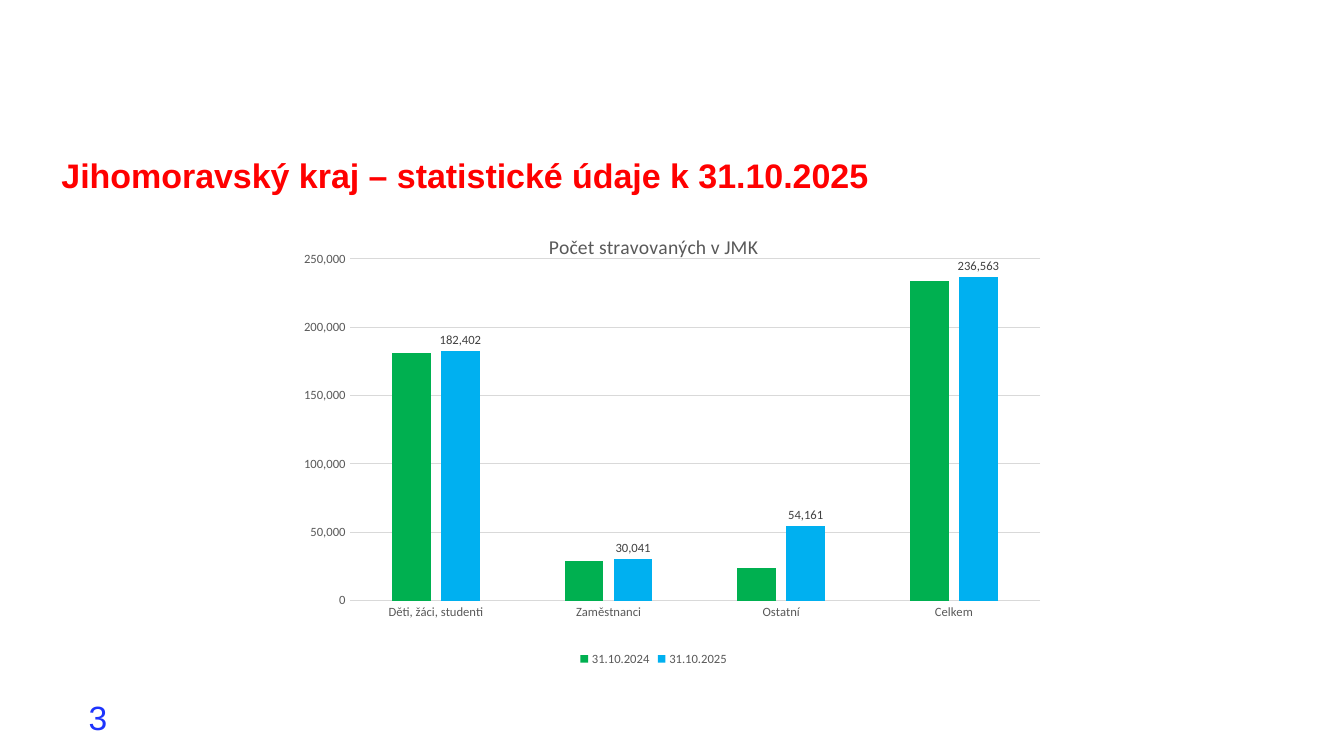
from lxml.etree import SubElement
from pptx import Presentation
from pptx.chart.data import CategoryChartData
from pptx.dml.color import RGBColor
from pptx.enum.chart import XL_CHART_TYPE, XL_LABEL_POSITION, XL_LEGEND_POSITION, XL_TICK_MARK
from pptx.enum.text import MSO_ANCHOR, PP_ALIGN
from pptx.oxml.ns import qn
from pptx.util import Pt

RED = RGBColor(0xFF, 0x00, 0x00)
BLUE = RGBColor(0x1D, 0x34, 0xFD)
GREEN = RGBColor(0x00, 0xB0, 0x50)
SKY = RGBColor(0x00, 0xB0, 0xF0)
GRAY = RGBColor(0x59, 0x59, 0x59)
DARK = RGBColor(0x40, 0x40, 0x40)
LIGHT = RGBColor(0xD9, 0xD9, 0xD9)

CATEGORIES = ["Děti, žáci, studenti", "Zaměstnanci", "Ostatní", "Celkem"]
SERIES = [
    ("31.10.2024", [181000, 29000, 24000, 234000], GREEN),
    ("31.10.2025", [182402, 30041, 54161, 236563], SKY),
]
PLOT_AREA = {"x": 0.127, "y": 0.097, "w": 0.847, "h": 0.75}
NUMBER_FORMAT = "#,##0"


def set_attrs(obj, **values):
    for name, value in values.items():
        setattr(obj, name, value)


def set_font(font, size, color, name="Calibri", bold=False):
    set_attrs(font, size=Pt(size), name=name, bold=bold)
    font.color.rgb = color


def set_line(line, color):
    line.color.rgb = color
    line.width = Pt(0.75)


def write_text(shape, box, text, anchor, size, color, bold=False):
    left, top, width, height = map(Pt, box)
    set_attrs(shape, left=left, top=top, width=width, height=height)
    tf = shape.text_frame
    set_attrs(tf, word_wrap=True, vertical_anchor=anchor)
    p = tf.paragraphs[0]
    p.alignment = PP_ALIGN.LEFT
    r = p.add_run()
    r.text = text
    set_font(r.font, size, color, "Arial", bold)
    return p


def set_plot_layout(chart):
    """Fix the inner plot area as fractions of the chart."""
    plot_area = chart._chartSpace.chart.plotArea
    for old in plot_area.findall(qn("c:layout")):
        plot_area.remove(old)
    layout = plot_area.makeelement(qn("c:layout"), {})
    plot_area.insert(0, layout)
    manual = SubElement(layout, qn("c:manualLayout"))
    settings = {"layoutTarget": "inner", "xMode": "edge", "yMode": "edge", **PLOT_AREA}
    for tag, value in settings.items():
        SubElement(manual, qn(f"c:{tag}")).set("val", str(value))


def format_axes(chart):
    for axis in (chart.category_axis, chart.value_axis):
        set_attrs(axis, major_tick_mark=XL_TICK_MARK.NONE, minor_tick_mark=XL_TICK_MARK.NONE)
        set_font(axis.tick_labels.font, 9, GRAY)
    set_line(chart.category_axis.format.line, LIGHT)
    value_axis = chart.value_axis
    set_attrs(value_axis, minimum_scale=0, maximum_scale=250000, major_unit=50000)
    set_attrs(value_axis.tick_labels, number_format=NUMBER_FORMAT, number_format_is_linked=False)
    value_axis.format.line.fill.background()
    set_line(value_axis.major_gridlines.format.line, LIGHT)


def add_value_labels(series):
    labels = series.data_labels
    set_attrs(labels, show_value=True, number_format=NUMBER_FORMAT,
              number_format_is_linked=False, position=XL_LABEL_POSITION.OUTSIDE_END)
    set_font(labels.font, 9, DARK)


def add_column_chart(s, box, title):
    data = CategoryChartData(number_format=NUMBER_FORMAT)
    data.categories = CATEGORIES
    for name, values, _ in SERIES:
        data.add_series(name, values)
    chart = s.shapes.add_chart(XL_CHART_TYPE.COLUMN_CLUSTERED, *map(Pt, box), data).chart
    set_font(chart.font, 10, GRAY)

    tf = chart.chart_title.text_frame
    tf.text = title
    set_font(tf.paragraphs[0].runs[0].font, 14, GRAY)
    chart.chart_title.include_in_layout = False

    chart.has_legend = True
    set_attrs(chart.legend, position=XL_LEGEND_POSITION.BOTTOM, include_in_layout=False)
    set_font(chart.legend.font, 9, GRAY)

    plot = chart.plots[0]
    set_attrs(plot, gap_width=219, overlap=-27, vary_by_categories=False)
    for series, (_, _, color) in zip(plot.series, SERIES):
        series.format.fill.solid()
        series.format.fill.fore_color.rgb = color
    add_value_labels(plot.series[1])
    format_axes(chart)
    set_plot_layout(chart)


def main():
    prs = Presentation()
    set_attrs(prs, slide_width=Pt(960), slide_height=Pt(540))
    s = prs.slides.add_slide(prs.slide_layouts[5])
    p = write_text(s.shapes.title, (36.7, 110.2, 741.6, 52.6),
                   "Jihomoravský kraj – statistické údaje k 31.10.2025",
                   MSO_ANCHOR.TOP, 24.3, RED, bold=True)
    p.line_spacing = 0.9
    number_box = s.shapes.add_textbox(0, 0, 0, 0)
    write_text(number_box, (56.2, 497.5, 216, 28.8), "3", MSO_ANCHOR.MIDDLE, 24, BLUE)
    add_column_chart(s, (175.7, 153.4, 582.5, 325.4), "Počet stravovaných v JMK")
    prs.save("out.pptx")


if __name__ == "__main__":
    main()
